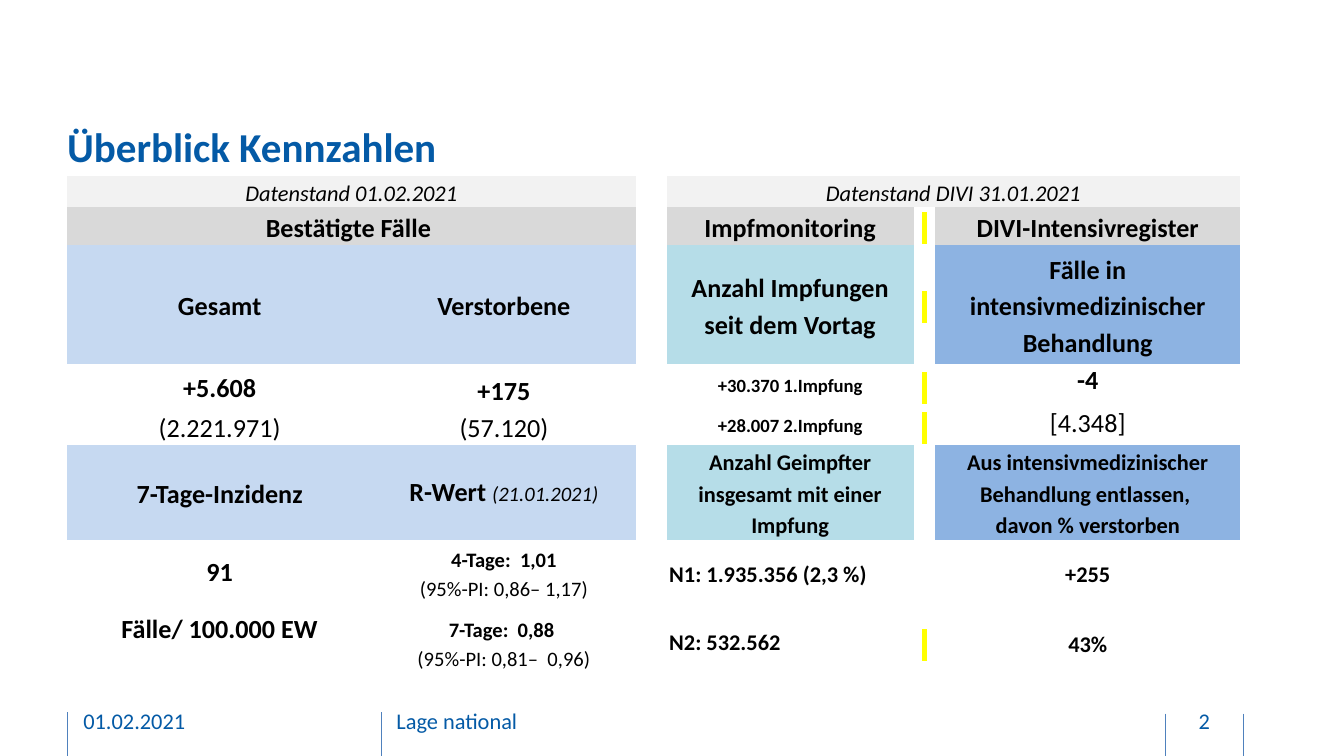
from dataclasses import dataclass

from lxml import etree
from pptx import Presentation
from pptx.dml.color import RGBColor
from pptx.enum.shapes import MSO_CONNECTOR
from pptx.enum.text import MSO_ANCHOR, PP_ALIGN
from pptx.oxml.ns import qn
from pptx.util import Inches, Pt

TOP, MIDDLE, BOTTOM = MSO_ANCHOR.TOP, MSO_ANCHOR.MIDDLE, MSO_ANCHOR.BOTTOM
LEFT, CENTER = PP_ALIGN.LEFT, PP_ALIGN.CENTER
STRAIGHT = MSO_CONNECTOR.STRAIGHT
NO_STYLE = "{2D5ABB26-0587-4C30-8999-92F81FD0307C}"


@dataclass(frozen=True)
class Theme:
    font: str = "Calibri"
    blue: str = "045AA6"
    rule: str = "4F81BD"
    black: str = "000000"
    marker: str = "FFFF00"
    light_gray: str = "F2F2F2"
    gray: str = "D9D9D9"
    pale_blue: str = "C6D9F1"
    teal: str = "B6DDE8"
    mid_blue: str = "8DB3E2"
    title: int = 22
    large: int = 14
    body: int = 12
    small: int = 11
    tiny: int = 10


theme = Theme()


def add_span(para, text, size, color, bold=False, italic=False):
    span = para.add_run()
    span.text = text
    look = {"name": theme.font, "size": Pt(size), "bold": bold, "italic": italic}
    for name, value in look.items():
        setattr(span.font, name, value)
    span.font.color.rgb = RGBColor.from_string(color)
    return span


deck = Presentation()
deck.slide_width = Inches(10)
deck.slide_height = deck.slide_width * 9 // 16
page = deck.slides.add_slide(deck.slide_layouts[6])

for x, top in ((0.5, 5.3), (2.84, 5.3), (8.67, 5.31), (9.25, 5.31)):
    rule = page.shapes.add_connector(
        STRAIGHT, Inches(x), Inches(top), Inches(x), deck.slide_height
    )
    rule.line.color.rgb = RGBColor.from_string(theme.rule)
    rule.line.width = Pt(0.5)
    etree.SubElement(rule._element.spPr, qn("a:effectLst"))

labels = [
    ("Überblick Kennzahlen", 0.5, 0.7, 8.73, 0.78, theme.title, True, LEFT),
    ("01.02.2021", 0.62, 5.21, 2.03, 0.3, theme.body, False, LEFT),
    ("Lage national", 2.95, 5.21, 3.17, 0.3, theme.body, False, LEFT),
    ("2", 8.69, 5.21, 0.54, 0.3, theme.body, False, CENTER),
]
for text, left, top, width, height, size, bold, align in labels:
    box = page.shapes.add_textbox(*map(Inches, (left, top, width, height)))
    frame_format = {
        "word_wrap": True, "vertical_anchor": MIDDLE,
        "margin_left": 0, "margin_right": 0, "margin_top": 0, "margin_bottom": 0,
    }
    for name, value in frame_format.items():
        setattr(box.text_frame, name, value)
    para = box.text_frame.paragraphs[0]
    para.alignment = align
    add_span(para, text, size, theme.blue, bold)

columns = [2.27, 1.96, 0.23, 1.84, 0.16, 2.27]
rows = [0.23, 0.28, 0.89, 0.32, 0.28, 0.54, 0.17, 0.27, 0.19, 0.03, 0.55]
frame = page.shapes.add_table(
    len(rows), len(columns), Inches(0.5), Inches(1.31),
    Inches(sum(columns)), Inches(sum(rows)),
)
table = frame.table
table.first_row = table.horz_banding = False
table._tbl.tblPr.find(qn("a:tableStyleId")).text = NO_STYLE
for column, width in zip(table.columns, columns):
    column.width = Inches(width)
for row, height in zip(table.rows, rows):
    row.height = Inches(height)

for cell in table.iter_cells():
    cell.fill.background()
    cell_format = {
        "margin_left": Inches(0.02), "margin_right": Inches(0.02),
        "margin_top": 0, "margin_bottom": 0, "vertical_anchor": MIDDLE,
    }
    for name, value in cell_format.items():
        setattr(cell, name, value)
    cell.text_frame.paragraphs[0]._p.get_or_add_endParaRPr().set("sz", "100")

merges = [(0, 0, 0, 1), (0, 3, 0, 5), (1, 0, 1, 1)]
merges += [(6, 4, 7, 4), (8, 4, 9, 4), (7, 2, 8, 2), (9, 2, 10, 2)]
merges += [(5, column, 6, column) for column in (0, 1, 2, 3, 5)]
merges += [(7, column, 9, column) for column in (0, 1, 3, 5)]
for top, left, bottom, right in merges:
    table.cell(top, left).merge(table.cell(bottom, right))

fills = {
    theme.light_gray: [(0, 0), (0, 3)],
    theme.gray: [(1, 0), (1, 3), (1, 5)],
    theme.pale_blue: [(2, 0), (2, 1), (5, 0), (5, 1)],
    theme.teal: [(2, 3), (5, 3)],
    theme.mid_blue: [(2, 5), (5, 5)],
}
for color, places in fills.items():
    for place in places:
        cell = table.cell(*place)
        cell.fill.solid()
        cell.fill.fore_color.rgb = RGBColor.from_string(color)

large_bold = (theme.large, True)
large_plain = (theme.large, False)
body_bold = (theme.body, True)
body_italic = (theme.body, False, True)
small_bold = (theme.small, True)
small_plain = (theme.small, False)
small_italic = (theme.small, False, True)
tiny_bold = (theme.tiny, True)

contents = [
    (0, 0, 1.15, [[("Datenstand 01.02.2021", body_italic)]]),
    (0, 3, 1.15, [[("Datenstand DIVI 31.01.2021", body_italic)]]),
    (1, 0, 1.15, [[("Bestätigte Fälle ", large_bold)]]),
    (1, 3, 1.15, [[("Impfmonitoring", large_bold)]]),
    (1, 5, 1.15, [[("DIVI-Intensivregister", large_bold)]]),
    (2, 0, 1.15, [[("Gesamt", large_bold)]]),
    (2, 1, 1.15, [[("Verstorbene", large_bold)]]),
    (2, 3, 1.15, [[("Anzahl Impfungen seit dem Vortag", large_bold)]]),
    (2, 5, 1.15, [[("Fälle in intensivmedizinischer Behandlung", large_bold)]]),
    (3, 0, 1.15, [[("+5.608", large_bold)]]),
    (3, 1, 1.15, [[("+175", large_bold)]]),
    (3, 3, 1, [[("+30.370 1.Impfung", tiny_bold)]]),
    (3, 5, 1, [[("-4", large_bold)]]),
    (4, 0, 1.15, [[("(2.221.971)", large_plain)]]),
    (4, 1, 1.15, [[("(57.120)", large_plain)]]),
    (4, 3, 1, [[("+28.007 2.Impfung", tiny_bold)]]),
    (4, 5, 1, [[("[4.348]", large_plain)]]),
    (5, 0, 1.15, [[("7-Tage-Inzidenz", large_bold)]]),
    (5, 1, 1, [[("R-Wert ", large_bold), ("(21.01.2021)", small_italic)]]),
    (5, 3, 1.15, [[("Anzahl Geimpfter insgesamt mit einer Impfung", body_bold)]]),
    (5, 5, 1.15, [
        [("Aus intensivmedizinischer Behandlung entlassen, ", body_bold)],
        [("davon % verstorben", body_bold)],
    ]),
    (7, 0, 1, [[("91", large_bold)]]),
    (7, 1, 1.15, [[("4-Tage:  1,01", small_bold)], [("(95%-PI: 0,86– 1,17)", small_plain)]]),
    (7, 3, 1.15, [[("N1: 1.935.356 (2,3 %)", body_bold)]]),
    (7, 5, 1.15, [[("+255", body_bold)]]),
    (10, 0, 1, [[("Fälle/ 100.000 EW", large_bold)]]),
    (10, 1, 1.15, [[("7-Tage:  0,88 ", small_bold)], [("(95%-PI: 0,81–  0,96)", small_plain)]]),
    (10, 3, 1, [[("N2: 532.562", body_bold)]]),
    (10, 5, 1.15, [[("43%", body_bold)]]),
]
left_aligned = [(7, 3), (10, 3)]
for row, column, spacing, lines in contents:
    text_frame = table.cell(row, column).text_frame
    for index, line in enumerate(lines):
        para = text_frame.add_paragraph() if index else text_frame.paragraphs[0]
        para.alignment = LEFT if (row, column) in left_aligned else CENTER
        para.line_spacing = spacing
        for text, look in line:
            add_span(para, text, look[0], theme.black, *look[1:])

for row, column, anchor in [(3, 1, BOTTOM), (4, 1, BOTTOM), (3, 5, TOP), (4, 5, TOP)]:
    table.cell(row, column).vertical_anchor = anchor
for row in (7, 10):
    cell = table.cell(row, 1)
    cell.margin_left = cell.margin_right = Inches(0.07)
table.cell(10, 0).margin_bottom = Inches(0.2)

for row in (1, 2, 3, 4, 10):
    para = table.cell(row, 4).text_frame.paragraphs[0]
    para.alignment = CENTER
    para.line_spacing = 1.15
    span = add_span(para, " ", theme.large, theme.black, True)
    highlight = etree.Element(qn("a:highlight"))
    etree.SubElement(highlight, qn("a:srgbClr"), val=theme.marker)
    span._r.rPr.find(qn("a:solidFill")).addnext(highlight)

deck.save("out.pptx")
